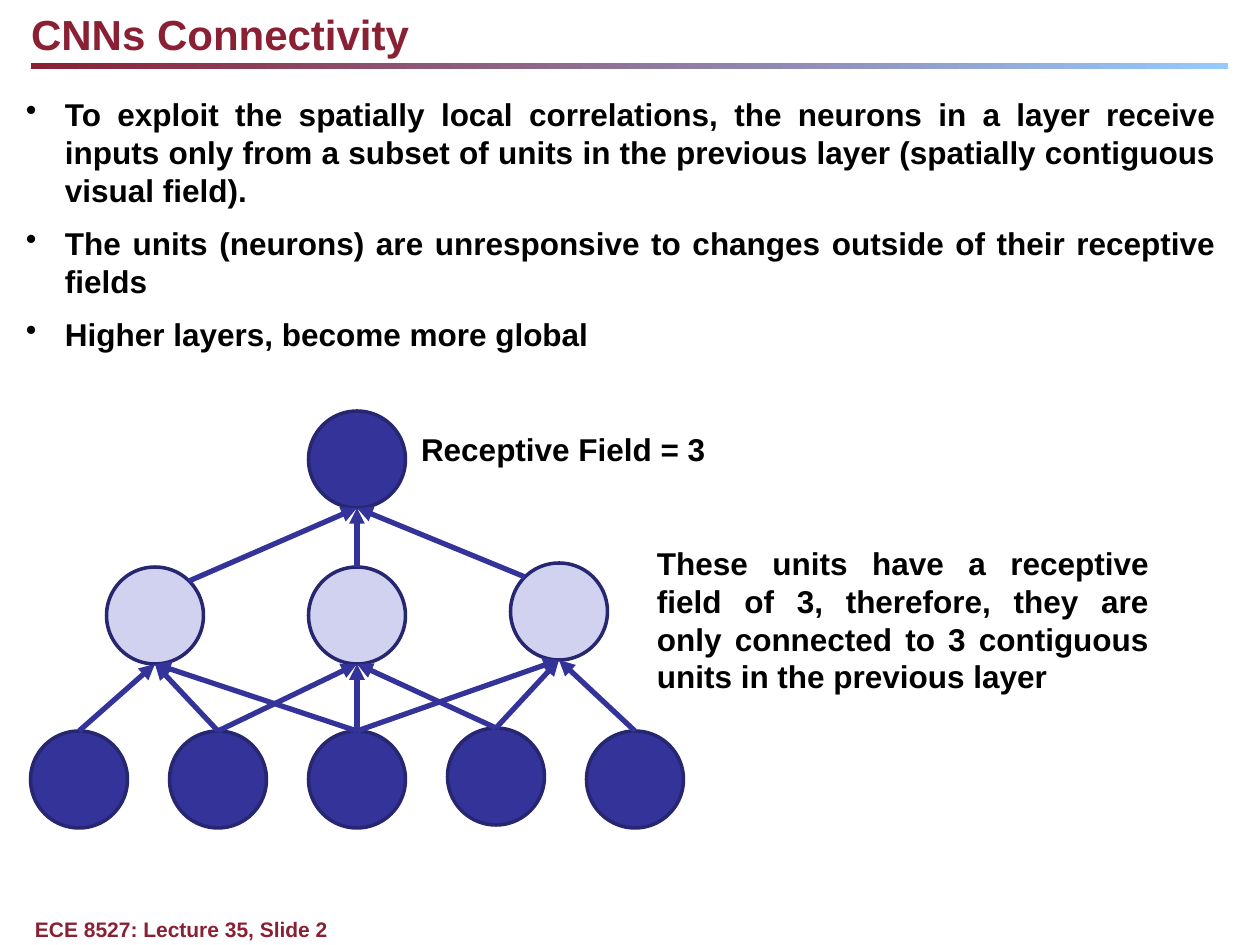
from pptx import Presentation
from pptx import util as u
from pptx.dml.color import RGBColor
from pptx.enum import shapes, text
from pptx.oxml.ns import qn
from lxml import etree

EMU_PER_PX = 914400 / 126
MAROON, SKY, BLACK = "892034", "95CAFF", "000000"
NAVY, OUTLINE, LAVENDER = "333399", "262671", "D1D1F0"
DIAMETER = 97
JUSTIFY = text.PP_ALIGN.JUSTIFY


def px(length):
    return u.Emu(round(length * EMU_PER_PX))


def color(value):
    return RGBColor.from_string(value)


class Deck:
    """Holds the style and the slide being built."""
    font = "Arial"

    def __init__(self):
        self.presentation = Presentation()
        self.presentation.slide_width = px(1260)
        self.presentation.slide_height = px(945)
        self.slide = self.presentation.slides.add_slide(
            self.presentation.slide_layouts[5])

    def set_text(self, shape, paragraphs, size, fill, align, bullet_indent=0):
        frame = shape.text_frame
        frame.word_wrap = True
        frame.auto_size = text.MSO_AUTO_SIZE.NONE
        frame.vertical_anchor = text.MSO_ANCHOR.TOP
        frame.margin_left = frame.margin_right = 0
        frame.margin_top = frame.margin_bottom = 0
        frame.text = "\n".join(paragraphs)
        for paragraph in frame.paragraphs:
            paragraph.alignment = align
            paragraph.space_before = u.Pt(0)
            paragraph.space_after = u.Pt(size / 2)
            if bullet_indent:
                properties = paragraph._p.get_or_add_pPr()
                properties.set("marL", str(px(bullet_indent)))
                properties.set("indent", str(-px(bullet_indent)))
                etree.SubElement(properties, qn("a:buChar"), char="•")
            paragraph.font.name = self.font
            paragraph.font.size = u.Pt(size)
            paragraph.font.bold = True
            paragraph.font.color.rgb = color(fill)

    def title(self, words, left, top, width, height):
        shape = self.slide.shapes.title
        shape.left, shape.top = px(left), px(top)
        shape.width, shape.height = px(width), px(height)
        self.set_text(shape, [words], 24, MAROON, text.PP_ALIGN.LEFT)

    def text_box(self, paragraphs, left, top, width, height, size=18,
                 fill=BLACK, align=JUSTIFY, bullet_indent=0):
        shape = self.slide.shapes.add_textbox(
            px(left), px(top), px(width), px(height))
        self.set_text(shape, paragraphs, size, fill, align, bullet_indent)

    def gradient_bar(self, left, top, width, height):
        shape = self.slide.shapes.add_shape(
            shapes.MSO_SHAPE.RECTANGLE, px(left), px(top), px(width), px(height))
        shape.shadow.inherit = False
        shape.line.fill.background()
        shape.fill.gradient()
        shape.fill.gradient_angle = 0
        for stop, value in zip(shape.fill.gradient_stops, (MAROON, SKY)):
            stop.color.rgb = color(value)

    def neuron(self, center, top, fill):
        shape = self.slide.shapes.add_shape(
            shapes.MSO_SHAPE.OVAL, px(center - DIAMETER / 2), px(top),
            px(DIAMETER), px(DIAMETER))
        shape.shadow.inherit = False
        shape.fill.solid()
        shape.fill.fore_color.rgb = color(fill)
        shape.line.color.rgb = color(OUTLINE)
        shape.line.width = u.Pt(2)

    def arrow(self, start, end):
        connector = self.slide.shapes.add_connector(
            shapes.MSO_CONNECTOR.STRAIGHT, *map(px, start + end))
        connector.line.color.rgb = color(NAVY)
        connector.line.width = u.Pt(3)
        etree.SubElement(connector.line._get_or_add_ln(), qn("a:tailEnd"),
                         type="triangle")
        etree.SubElement(connector._element.spPr, qn("a:effectLst"))


def draw_network(deck):
    middle = 357
    inputs = [(middle + 139 * step, top)
              for step, top in zip(range(-2, 3), (731, 731, 731, 728, 731))]
    hidden = [(middle + 202 * step, top)
              for step, top in zip(range(-1, 2), (567, 567, 563))]
    output = (middle, 411)

    for layer, fill in ((inputs, NAVY), (hidden, LAVENDER), ([output], NAVY)):
        for center, top in layer:
            deck.neuron(center, top, fill)

    for index, (center, top) in enumerate(hidden):
        for source in inputs[index:index + 3]:
            deck.arrow(source, (center, top + DIAMETER))

    # Outer hidden units send their arrow from the 45-degree point facing inward
    for side, (center, top) in zip((1, 0, -1), hidden):
        start = (center + 34 * side, top + 14 * abs(side))
        deck.arrow(start, (output[0], output[1] + DIAMETER))


def main():
    deck = Deck()
    deck.gradient_bar(31, 63, 1197, 6)
    deck.text_box(["ECE 8527: Lecture 35, Slide 2"], 35, 917, 1124, 25,
                  size=12, fill=MAROON, align=text.PP_ALIGN.LEFT)
    deck.title("CNNs Connectivity", 31, 8, 945, 50)
    deck.text_box([
        "To exploit the spatially local correlations, the neurons in a layer "
        "receive inputs only from a subset of units in the previous layer "
        "(spatially contiguous visual field).",
        "The units (neurons) are unresponsive to changes outside of their "
        "receptive fields",
        "Higher layers, become more global",
    ], 26, 95, 1190, 280, bullet_indent=39)
    draw_network(deck)
    deck.text_box(["Receptive Field = 3"], 421, 430, 344, 50)
    deck.text_box([
        "These units have a receptive field of 3, therefore, they are only "
        "connected to 3 contiguous units in the previous layer",
    ], 657, 544, 492, 118)
    deck.presentation.save("out.pptx")


if __name__ == "__main__":
    main()
